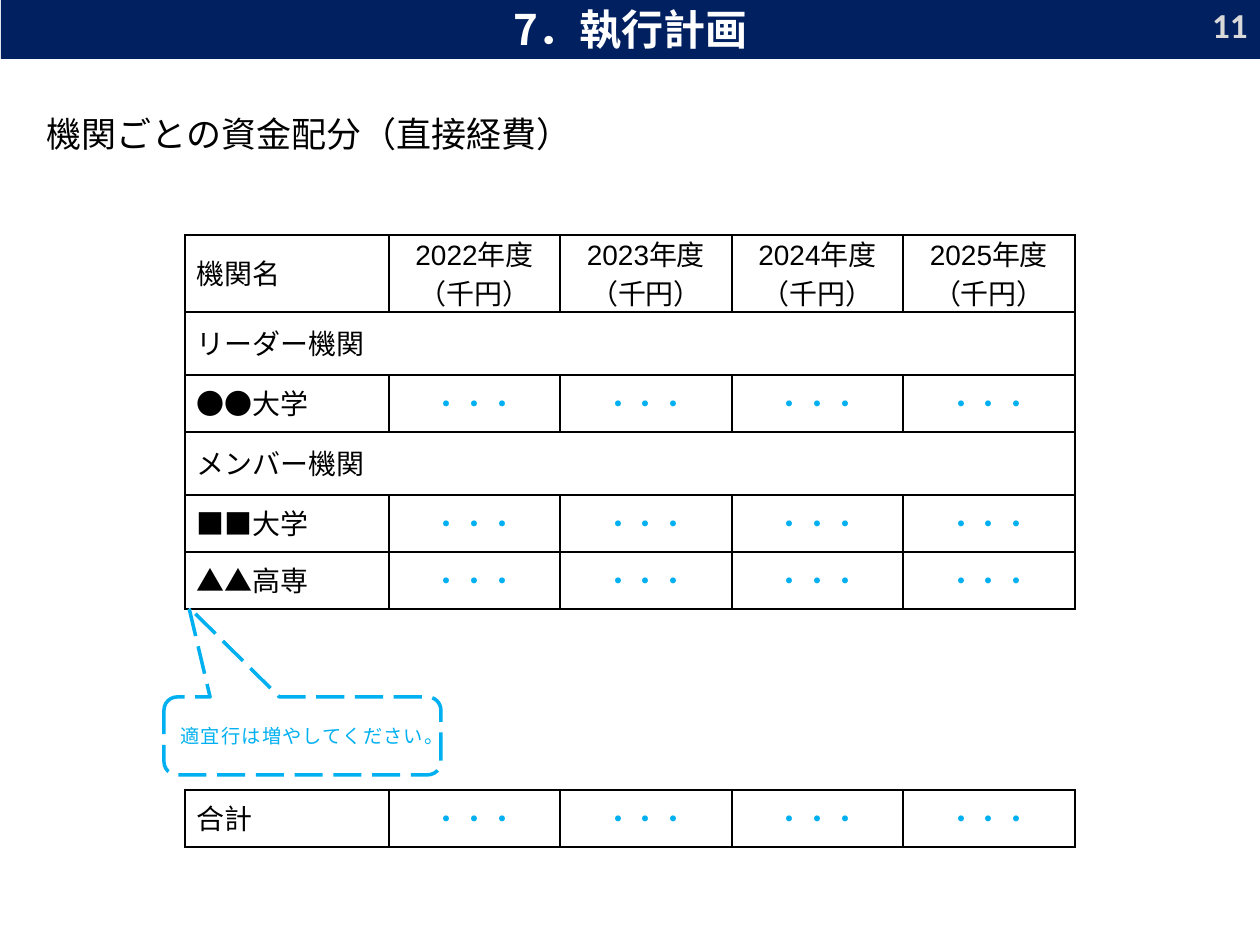
import pptx
import pptx.dml.color
import pptx.enum.dml
import pptx.enum.shapes
import pptx.enum.text
import pptx.oxml.ns
import pptx.util
import lxml.etree

PX = 914400 // 126
COLORS = {
    "navy": "002060",
    "white": "FFFFFF",
    "black": "000000",
    "sky": "00B0F0",
    "gray": "D9D9D9",
}
JAPANESE_FONT = "Noto Sans CJK JP"
ALIGN = pptx.enum.text.PP_ALIGN
MIDDLE = pptx.enum.text.MSO_ANCHOR.MIDDLE
COLUMNS = [204, 171, 172, 171, 172]
DOTS = ["・・・"] * 4
YEARS = [f"{year}年度\n（千円）" for year in range(2022, 2026)]
ALLOCATION = [
    ["機関名"] + YEARS,
    ["リーダー機関"],
    ["●●大学"] + DOTS,
    ["メンバー機関"],
    ["■■大学"] + DOTS,
    ["▲▲高専"] + DOTS,
]


def px(*lengths):
    return [length * PX for length in lengths]


def rgb(name):
    return pptx.dml.color.RGBColor.from_string(COLORS[name])


def add_child(parent, tag, **attributes):
    return lxml.etree.SubElement(parent, pptx.oxml.ns.qn(tag), **attributes)


def paint(fill, color):
    fill.solid()
    fill.fore_color.rgb = rgb(color)


def write(frame, text, size, font, color, align, bold=False, spacing=None):
    frame.word_wrap = True
    for index, words in enumerate(text.split("\n")):
        para = frame.add_paragraph() if index else frame.paragraphs[0]
        para.alignment = align
        if spacing:
            para.line_spacing = pptx.util.Pt(spacing)
        span = para.add_run()
        span.text = words
        span.font.size = pptx.util.Pt(size)
        span.font.name = font
        span.font.bold = bold
        span.font.color.rgb = rgb(color)
        add_child(span.font._element, "a:ea", typeface=JAPANESE_FONT)


def add_title(page, text):
    title = page.shapes.title
    title.left, title.top, title.width, title.height = px(1, -1, 1259, 60)
    paint(title.fill, "navy")
    title.text_frame.auto_size = pptx.enum.text.MSO_AUTO_SIZE.NONE
    title.text_frame.vertical_anchor = MIDDLE
    write(title.text_frame, text, 24, JAPANESE_FONT, "white", ALIGN.CENTER, True)


def add_heading(page, text):
    box = page.shapes.add_textbox(*px(34, 106, 645, 55))
    paint(box.fill, "white")
    color = box.fill._xPr.find(".//" + pptx.oxml.ns.qn("a:srgbClr"))
    add_child(color, "a:alpha", val="75000")
    write(box.text_frame, text, 20, "Arial", "black", ALIGN.LEFT)


def add_page_number(page, text):
    box = page.shapes.add_textbox(*px(966, 0, 294, 50))
    box.text_frame.vertical_anchor = MIDDLE
    write(box.text_frame, text, 20, "Calibri", "gray", ALIGN.RIGHT, True)


def add_callout(page, text):
    shape = pptx.enum.shapes.MSO_SHAPE.ROUNDED_RECTANGULAR_CALLOUT
    box = page.shapes.add_shape(shape, *px(164, 697, 277, 78))
    for index, value in enumerate([-0.41, -1.65, 0.17]):
        box.adjustments[index] = value
    box.shadow.inherit = False
    paint(box.fill, "white")
    box.line.color.rgb = rgb("sky")
    box.line.width = pptx.util.Pt(2)
    box.line.dash_style = pptx.enum.dml.MSO_LINE.LONG_DASH
    box.text_frame.vertical_anchor = MIDDLE
    write(box.text_frame, text, 11, "TeX Gyre Schola", "sky", ALIGN.JUSTIFY)


def format_cell(cell, across):
    properties = cell._tc.get_or_add_tcPr()
    for side in ("a:lnL", "a:lnR", "a:lnT", "a:lnB"):
        border = add_child(properties, side, w=str(pptx.util.Pt(1)))
        add_child(add_child(border, "a:solidFill"), "a:srgbClr", val=COLORS["black"])
    cell.fill.background()
    cell.vertical_anchor = MIDDLE
    cell.margin_left = cell.margin_right = 12 * PX
    cell.margin_top = cell.margin_bottom = (5 if across else 0) * PX


def add_table(page, top, rows, heights, label_font="Arial"):
    area = px(185, top, sum(COLUMNS), sum(heights))
    table = page.shapes.add_table(len(rows), len(COLUMNS), *area).table
    table.first_row = table.horz_banding = False
    for column, width in zip(table.columns, COLUMNS):
        column.width = width * PX
    for index, (texts, height) in enumerate(zip(rows, heights)):
        table.rows[index].height = height * PX
        across = len(texts) == 1
        for cell in table.rows[index].cells:
            format_cell(cell, across)
        if across:
            table.cell(index, 0).merge(table.cell(index, len(COLUMNS) - 1))
        for position, text in enumerate(texts):
            color = "sky" if text in DOTS else "black"
            align = ALIGN.CENTER if position else ALIGN.JUSTIFY
            font = "Arial" if position else label_font
            frame = table.cell(index, position).text_frame
            write(frame, text, 16, font, color, align, spacing=22)


def main():
    deck = pptx.Presentation()
    deck.slide_width, deck.slide_height = px(1260, 945)
    page = deck.slides.add_slide(deck.slide_layouts[5])
    add_title(page, "7．執行計画")
    add_heading(page, "機関ごとの資金配分（直接経費）")
    add_table(page, 235, ALLOCATION, [77, 63, 57, 63, 57, 57])
    add_callout(page, "適宜行は増やしてください。")
    add_page_number(page, "11")
    add_table(page, 790, [["合計"] + DOTS], [57], JAPANESE_FONT)
    deck.save("out.pptx")


if __name__ == "__main__":
    main()
